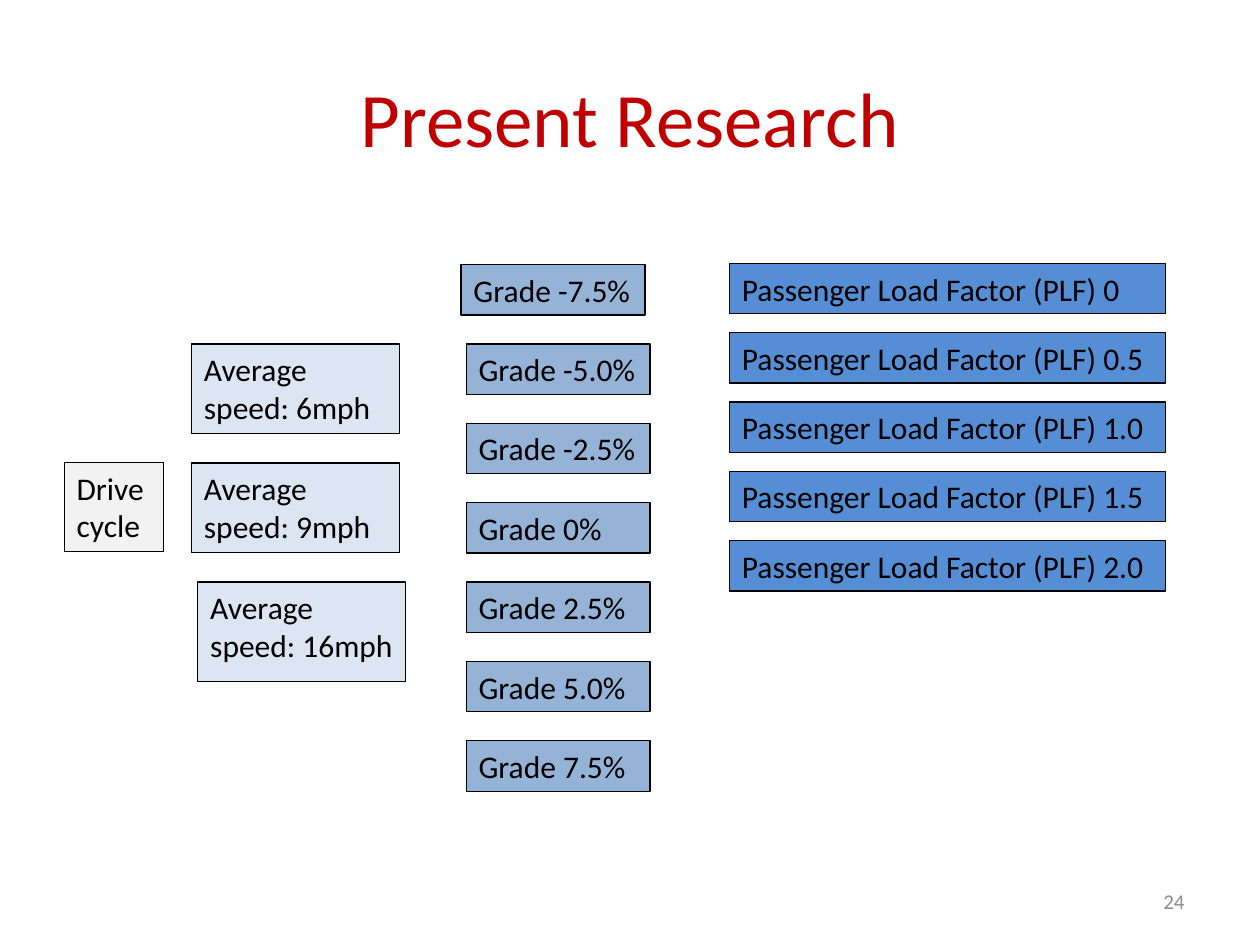
import pptx
import pptx.util
import pptx.dml.color
import pptx.enum.shapes
import pptx.enum.text
from pptx.util import Inches

FONT = "Calibri"
COLORS = {
    "title": "C00000", "number": "8C8C8C", "text": "000000", "line": "000000",
    "cycle": "F2F2F2", "speed": "DCE6F2", "grade": "95B3D7", "load": "558ED5",
}
TITLE = "Present Research"
PAGE_NUMBER = "24"

# Each column: fill, left, top, width, height, step between tops, labels
COLUMNS = [
    ("cycle", 0.51, 3.67, 0.79, 0.71, 0, ["Drive cycle"]),
    ("speed", 1.52, 2.73, 1.65, 0.71, 0.945,
     [f"Average speed: {speed}mph" for speed in (6, 9, 16)]),
    ("grade", 3.7, 2.1, 1.46, 0.4, 0.63,
     [f"Grade {grade}%" for grade in ("-7.5", "-5.0", "-2.5", "0", "2.5", "5.0", "7.5")]),
    ("load", 5.79, 2.09, 3.46, 0.4, 0.55,
     [f"Passenger Load Factor (PLF) {load}" for load in ("0", "0.5", "1.0", "1.5", "2.0")]),
]
# Boxes that leave their column's grid: shift of left edge, added height
ADJUSTMENTS = {"Grade -7.5%": (-0.04, 0), "Average speed: 16mph": (0.05, 0.08)}

ALIGN = pptx.enum.text.PP_ALIGN
ANCHOR = pptx.enum.text.MSO_ANCHOR


def rgb(name):
    return pptx.dml.color.RGBColor.from_string(COLORS[name])


def write(shape, text, size, color, align, anchor):
    frame = shape.text_frame
    frame.word_wrap = True
    frame.vertical_anchor = anchor
    para = frame.paragraphs[0]
    para.text = text
    para.alignment = align
    para.font.name = FONT
    para.font.size = pptx.util.Pt(size)
    para.font.color.rgb = rgb(color)


def add_label(page, place, text, size, color, align):
    box = page.shapes.add_textbox(*map(Inches, place))
    write(box, text, size, color, align, ANCHOR.MIDDLE)


def add_box(page, place, text, fill):
    box = page.shapes.add_shape(
        pptx.enum.shapes.MSO_SHAPE.RECTANGLE, *map(Inches, place))
    box.shadow.inherit = False
    box.fill.solid()
    box.fill.fore_color.rgb = rgb(fill)
    box.line.color.rgb = rgb("line")
    box.line.width = pptx.util.Pt(0.75)
    box.text_frame.margin_right = Inches(0.05)
    write(box, text, 18, "text", ALIGN.LEFT, ANCHOR.TOP)


def main():
    deck = pptx.Presentation()
    deck.slide_width, deck.slide_height = Inches(10), Inches(7.5)
    page = deck.slides.add_slide(deck.slide_layouts[6])

    add_label(page, (0.5, 0.3, 9, 1.25), TITLE, 44, "title", ALIGN.CENTER)
    add_label(page, (7.17, 6.95, 2.33, 0.4), PAGE_NUMBER, 12, "number", ALIGN.RIGHT)

    for fill, left, top, width, height, step, labels in COLUMNS:
        for row, label in enumerate(labels):
            shift, extra = ADJUSTMENTS.get(label, (0, 0))
            place = (left + shift, top + row * step, width, height + extra)
            add_box(page, place, label, fill)

    deck.save("out.pptx")


if __name__ == "__main__":
    main()
